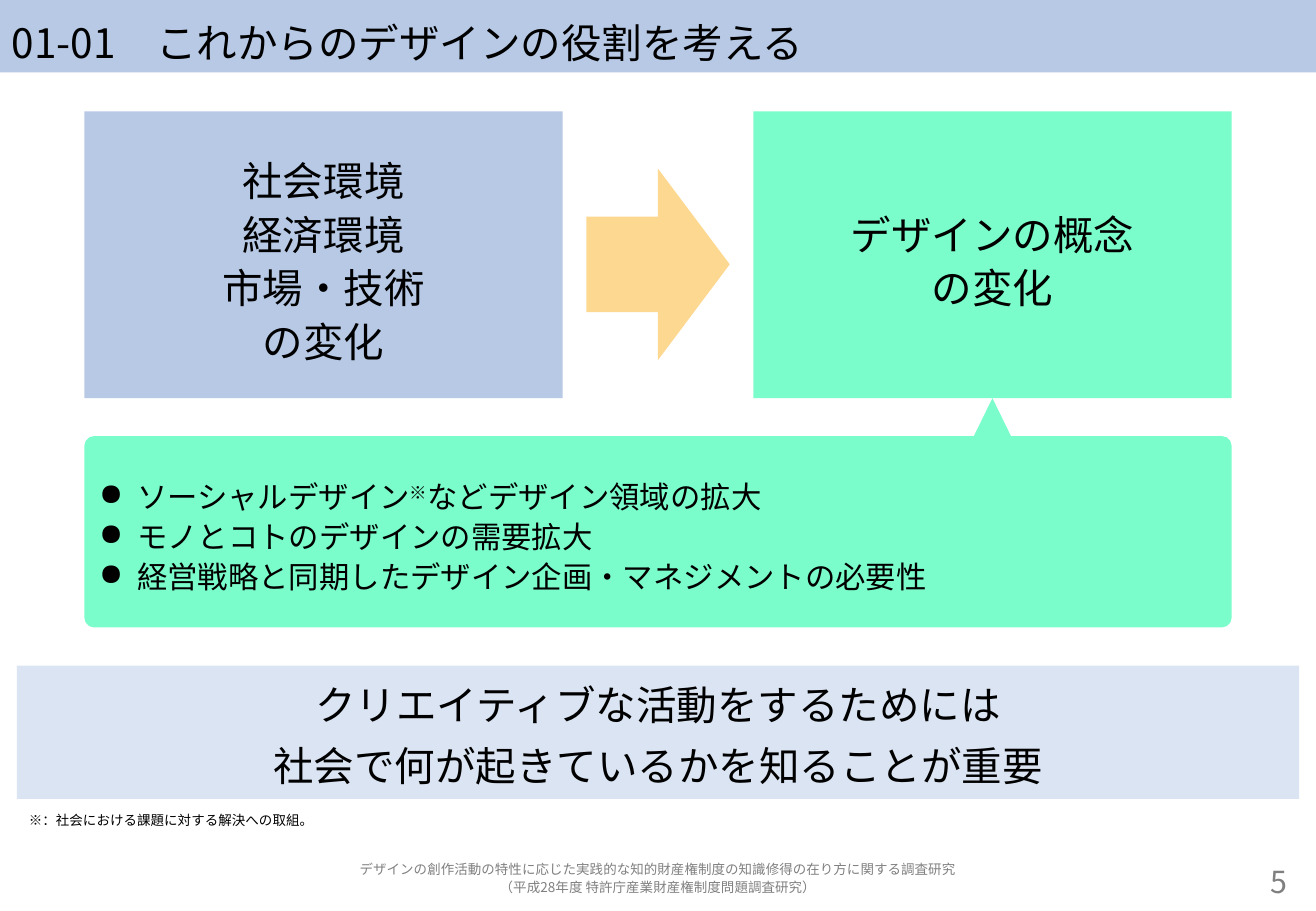
import pptx
import pptx.dml.color
import pptx.enum.shapes
import pptx.enum.text
import pptx.oxml.ns
import pptx.util
from lxml import etree

Pt = pptx.util.Pt
SHAPES = pptx.enum.shapes.MSO_SHAPE
ALIGN = pptx.enum.text.PP_ALIGN
ANCHOR = pptx.enum.text.MSO_ANCHOR

FONT = "Noto Sans CJK JP"
COLORS = {"blue": "B7C9E5", "green": "7BFCCB", "yellow": "FCD890",
          "pale": "DBE4F2", "black": "000000", "gray": "808080"}

TITLE = ["01-01\u3000これからのデザインの役割を考える"]
CAUSES = ["社会環境", "経済環境", "市場・技術", "の変化"]
EFFECT = ["デザインの概念", "の変化"]
# A tuple is a line whose middle part is superscript
TRENDS = [("ソーシャルデザイン", "※", "などデザイン領域の拡大"),
          "モノとコトのデザインの需要拡大",
          "経営戦略と同期したデザイン企画・マネジメントの必要性"]
MESSAGE = ["クリエイティブな活動をするためには", "社会で何が起きているかを知ることが重要"]
FOOTNOTE = ["※：社会における課題に対する解決への取組。"]
FOOTER = ["デザインの創作活動の特性に応じた実践的な知的財産権制度の知識修得の在り方に関する調査研究",
          "（平成28年度 特許庁産業財産権制度問題調査研究）"]
PAGE_NUMBER = ["5"]

SLIDE_WIDTH, SLIDE_HEIGHT = 780, 540
MARGIN = 50
BOX_TOP, BOX_WIDTH, BOX_HEIGHT = 66, 283.5, 170
RIGHT_BOX_LEFT = SLIDE_WIDTH - MARGIN - BOX_WIDTH
ARROW_WIDTH, ARROW_HEIGHT = 85, 113.4
PANEL_TOP, PANEL_HEIGHT = 258.5, 113.4
POINTER_SIZE = 22.5
BAND_LEFT, BAND_TOP, BAND_HEIGHT = 10, 394.5, 79
BAND_WIDTH = SLIDE_WIDTH - 2 * BAND_LEFT
SMALL_HEIGHT, FOOTER_TOP = 22.5, 508.3
LINE_PITCH = 1.32
TEXT_DROP = 0.17
BULLET_INDENT = 22.5

presentation = pptx.Presentation()
presentation.slide_width, presentation.slide_height = Pt(SLIDE_WIDTH), Pt(SLIDE_HEIGHT)
slide = presentation.slides.add_slide(presentation.slide_layouts[6])


def rgb(name):
    return pptx.dml.color.RGBColor.from_string(COLORS[name])


def add_block(kind, color, left, top, width, height):
    shape = slide.shapes.add_shape(kind, Pt(left), Pt(top), Pt(width), Pt(height))
    shape.shadow.inherit = False
    shape.fill.solid()
    shape.fill.fore_color.rgb = rgb(color)
    shape.line.fill.background()
    return shape


def add_label(left, top, width, height):
    return slide.shapes.add_textbox(Pt(left), Pt(top), Pt(width), Pt(height))


def add_bullet(paragraph):
    properties = paragraph._p.get_or_add_pPr()
    properties.set("marL", str(Pt(BULLET_INDENT)))
    properties.set("indent", str(-Pt(BULLET_INDENT)))
    bullet = etree.SubElement(properties, pptx.oxml.ns.qn("a:buChar"))
    bullet.set("char", "●")


def add_run(paragraph, text, size, color):
    run = paragraph.add_run()
    run.text = text
    run.font.size = Pt(size)
    run.font.name = FONT
    run.font.color.rgb = rgb(color)
    east_asian = etree.SubElement(run._r.get_or_add_rPr(), pptx.oxml.ns.qn("a:ea"))
    east_asian.set("typeface", FONT)
    return run


def write(shape, lines, size, align=ALIGN.CENTER, color="black", bullets=False,
          anchor=ANCHOR.MIDDLE, top_inset=0, gap=0):
    frame = shape.text_frame
    frame.word_wrap = True
    frame.vertical_anchor = anchor
    frame.margin_top = Pt(top_inset or round(size * TEXT_DROP, 2))
    frame.margin_bottom = Pt(0)
    for index, line in enumerate(lines):
        paragraph = frame.paragraphs[0] if index == 0 else frame.add_paragraph()
        paragraph.alignment = align
        paragraph.line_spacing = Pt(round(size * LINE_PITCH, 2))
        if index and gap:
            paragraph.space_before = Pt(gap)
        if bullets:
            add_bullet(paragraph)
        parts = (line,) if isinstance(line, str) else line
        for position, part in enumerate(parts):
            run = add_run(paragraph, part, size, color)
            if position == 1:
                run._r.get_or_add_rPr().set("baseline", "30000")


title = add_block(SHAPES.RECTANGLE, "blue", 0, 0, SLIDE_WIDTH, 43)
write(title, TITLE, 24, ALIGN.LEFT)

for left, color, lines in ((MARGIN, "blue", CAUSES), (RIGHT_BOX_LEFT, "green", EFFECT)):
    box = add_block(SHAPES.RECTANGLE, color, left, BOX_TOP, BOX_WIDTH, BOX_HEIGHT)
    write(box, lines, 24)

add_block(SHAPES.RIGHT_ARROW, "yellow", (SLIDE_WIDTH - ARROW_WIDTH) / 2, 100,
          ARROW_WIDTH, ARROW_HEIGHT)

panel = add_block(SHAPES.ROUNDED_RECTANGLE, "green", MARGIN, PANEL_TOP,
                  SLIDE_WIDTH - 2 * MARGIN, PANEL_HEIGHT)
panel.adjustments[0] = 0.05
write(panel, TRENDS, 18, ALIGN.LEFT, bullets=True)
add_block(SHAPES.ISOSCELES_TRIANGLE, "green",
          RIGHT_BOX_LEFT + (BOX_WIDTH - POINTER_SIZE) / 2, BOX_TOP + BOX_HEIGHT,
          POINTER_SIZE, PANEL_TOP - BOX_TOP - BOX_HEIGHT + 0.5)

message = add_block(SHAPES.RECTANGLE, "pale", BAND_LEFT, BAND_TOP, BAND_WIDTH, BAND_HEIGHT)
write(message, MESSAGE, 24, anchor=ANCHOR.TOP, top_inset=5.6, gap=4.8)

footnote = add_label(BAND_LEFT, BAND_TOP + BAND_HEIGHT, BAND_WIDTH, SMALL_HEIGHT)
write(footnote, FOOTNOTE, 8, ALIGN.LEFT)
footer = add_label(BAND_LEFT, FOOTER_TOP, BAND_WIDTH, SMALL_HEIGHT)
write(footer, FOOTER, 8, color="gray")
page_number = add_label(673.5, FOOTER_TOP, 96.5, SMALL_HEIGHT)
write(page_number, PAGE_NUMBER, 18, ALIGN.RIGHT, "gray")

presentation.save("out.pptx")
